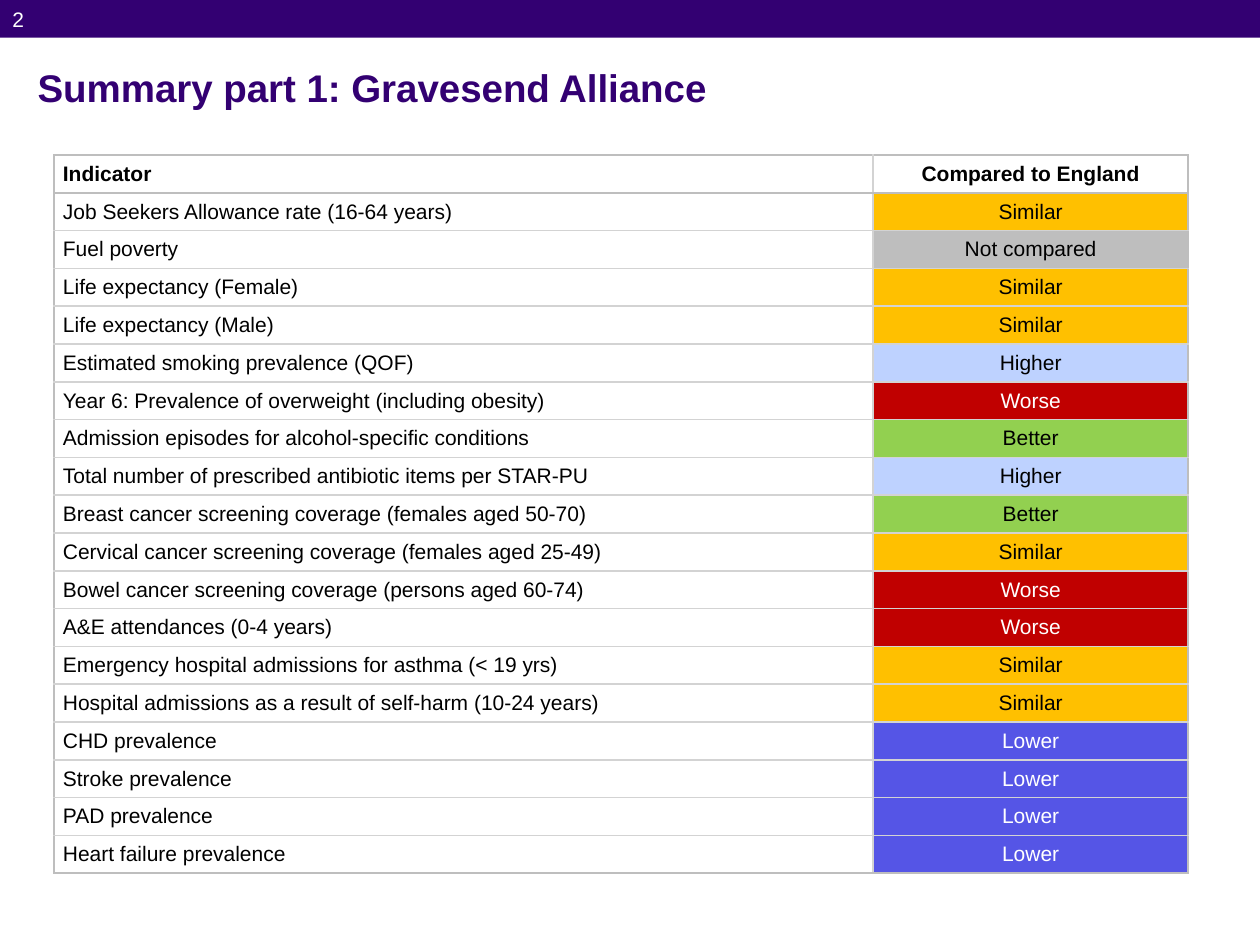
from lxml import etree
from pptx import Presentation
from pptx.dml.color import RGBColor
from pptx.enum import shapes, text
from pptx.oxml import ns
from pptx.util import Inches, Pt

COLORS = {
    "purple": "330072", "white": "FFFFFF", "black": "000000",
    "outer border": "BEBEBE", "inner border": "D3D3D3",
}
# Rating: (cell fill, text colour)
RATINGS = {
    "Similar": ("FFC000", "000000"),
    "Not compared": ("BEBEBE", "000000"),
    "Higher": ("BED2FF", "000000"),
    "Lower": ("5555E6", "FFFFFF"),
    "Better": ("92D050", "000000"),
    "Worse": ("C00000", "FFFFFF"),
}
HEADER = ("Indicator", "Compared to England")
INDICATORS = [
    ("Job Seekers Allowance rate (16-64 years)", "Similar"),
    ("Fuel poverty", "Not compared"),
    ("Life expectancy (Female)", "Similar"),
    ("Life expectancy (Male)", "Similar"),
    ("Estimated smoking prevalence (QOF)", "Higher"),
    ("Year 6: Prevalence of overweight (including obesity)", "Worse"),
    ("Admission episodes for alcohol-specific conditions", "Better"),
    ("Total number of prescribed antibiotic items per STAR-PU", "Higher"),
    ("Breast cancer screening coverage (females aged 50-70)", "Better"),
    ("Cervical cancer screening coverage (females aged 25-49)", "Similar"),
    ("Bowel cancer screening coverage (persons aged 60-74)", "Worse"),
    ("A&E attendances (0-4 years)", "Worse"),
    ("Emergency hospital admissions for asthma (< 19 yrs)", "Similar"),
    ("Hospital admissions as a result of self-harm (10-24 years)", "Similar"),
    ("CHD prevalence", "Lower"),
    ("Stroke prevalence", "Lower"),
    ("PAD prevalence", "Lower"),
    ("Heart failure prevalence", "Lower"),
]


def write(frame, words, size, color, bold=False):
    frame.text = words
    font = frame.paragraphs[0].runs[0].font
    font.name, font.size, font.bold = "Arial", Pt(size), bold
    font.color.rgb = RGBColor.from_string(color)


def set_borders(cell, outer_sides):
    """Draw 1 pt borders, darker on the sides named in outer_sides."""
    properties = cell._tc.get_or_add_tcPr()
    for position, side in enumerate("LRTB"):
        color = COLORS["outer border" if side in outer_sides else "inner border"]
        line = etree.Element(ns.qn(f"a:ln{side}"), w=str(Pt(1)))
        fill = etree.SubElement(line, ns.qn("a:solidFill"))
        etree.SubElement(fill, ns.qn("a:srgbClr"), val=color)
        properties.insert(position, line)


presentation = Presentation()
presentation.slide_width, presentation.slide_height = Inches(10), Inches(7.5)
slide = presentation.slides.add_slide(presentation.slide_layouts[6])

banner = slide.shapes.add_shape(
    shapes.MSO_SHAPE.RECTANGLE, 0, 0, Inches(10), Inches(0.3))
banner.shadow.inherit = False
banner.fill.solid()
banner.fill.fore_color.rgb = RGBColor.from_string(COLORS["purple"])
banner.line.fill.background()

title = slide.shapes.add_textbox(Inches(0.2), Inches(0.47), Inches(9.61), Inches(0.45))
title.text_frame.word_wrap = True
title.text_frame.vertical_anchor = text.MSO_ANCHOR.MIDDLE
write(title.text_frame, "Summary part 1: Gravesend Alliance", 22, COLORS["purple"], True)

page_number = slide.shapes.add_textbox(0, 0, Inches(0.63), Inches(0.63))
page_number.text_frame.word_wrap = True
write(page_number.text_frame, "2", 12, COLORS["white"])

rows = [HEADER] + INDICATORS
row_height = Inches(0.3)
table = slide.shapes.add_table(
    len(rows), 2, Inches(0.43), Inches(1.23), Inches(9), row_height * len(rows)).table
table.first_row = table.horz_banding = False
table.columns[0].width, table.columns[1].width = Inches(6.5), Inches(2.5)

for row, entries in enumerate(rows):
    table.rows[row].height = row_height
    for column, words in enumerate(entries):
        cell = table.cell(row, column)
        cell.margin_left = cell.margin_right = Inches(0.07)
        cell.margin_top = cell.margin_bottom = 0
        cell.vertical_anchor = text.MSO_ANCHOR.MIDDLE

        fill, color = RATINGS.get(words, (None, COLORS["black"]))
        write(cell.text_frame, words, 12, color, bold=row == 0)
        if column == 1:
            cell.text_frame.paragraphs[0].alignment = text.PP_ALIGN.CENTER
        if fill:
            cell.fill.solid()
            cell.fill.fore_color.rgb = RGBColor.from_string(fill)
        else:
            cell.fill.background()

        outer_sides = "LR"[column]
        if row <= 1:
            outer_sides += "T"
        if row in (0, len(rows) - 1):
            outer_sides += "B"
        set_borders(cell, outer_sides)

presentation.save("out.pptx")
